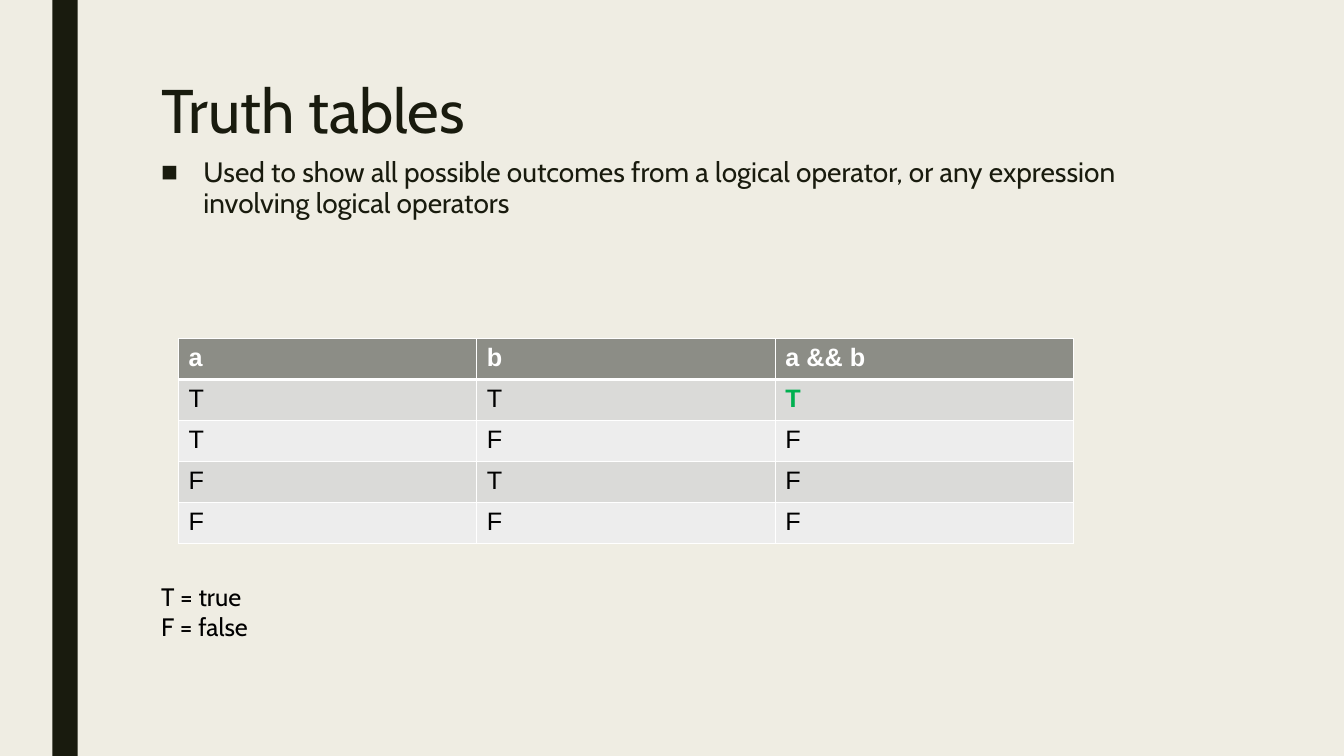
from itertools import product

from lxml import etree
from pptx import Presentation
from pptx.dml.color import RGBColor
from pptx.enum.shapes import MSO_SHAPE
from pptx.enum.text import MSO_ANCHOR, PP_ALIGN
from pptx.oxml.ns import qn
from pptx.util import Inches, Pt

RECT = MSO_SHAPE.RECTANGLE
TOP = MSO_ANCHOR.TOP
LEFT = PP_ALIGN.LEFT
TITLE_ONLY = 5

COLORS = {
    "paper": "EFEDE3", "ink": "191B0E", "head": "8C8D86", "odd": "DADAD8",
    "even": "EDEDED", "white": "FFFFFF", "black": "000000", "true": "00B050",
}


def color(name):
    return RGBColor.from_string(COLORS[name])


def place(shape, box):
    shape.left, shape.top, shape.width, shape.height = map(Inches, box)


def write(par, text, size, tint, face="Cabin", bold=False):
    run = par.add_run()
    run.text = text
    font = run.font
    font.size, font.name, font.bold = Pt(size), face, bold
    font.color.rgb = color(tint)


def add_text(slide, box):
    frame = slide.shapes.add_textbox(*map(Inches, box)).text_frame
    frame.word_wrap = True
    return frame


def add_bar(slide, box):
    bar = slide.shapes.add_shape(RECT, *map(Inches, box))
    bar.shadow.inherit = False
    bar.fill.solid()
    bar.fill.fore_color.rgb = color("ink")
    bar.line.fill.background()


def add_title(slide, box, text):
    title = slide.shapes.title
    place(title, box)
    frame = title.text_frame
    frame.vertical_anchor = TOP
    par = frame.paragraphs[0]
    par.alignment, par.line_spacing = LEFT, 0.89
    write(par, text, 44, "ink")


def add_bullet(slide, box, text):
    par = add_text(slide, box).paragraphs[0]
    par.line_spacing = 0.94
    props = par._p.get_or_add_pPr()
    props.set("marL", str(Inches(0.42)))
    props.set("indent", str(-Inches(0.42)))
    tint = etree.SubElement(props, qn("a:buClr"))
    etree.SubElement(tint, qn("a:srgbClr"), val=COLORS["ink"])
    etree.SubElement(props, qn("a:buFont"), typeface="Arial")
    etree.SubElement(props, qn("a:buChar"), char="■")
    write(par, text, 20, "ink")


def add_edges(cell, widths):
    """Draw white borders; widths are points for left, right, top, bottom."""
    props = cell._tc.get_or_add_tcPr()
    for side, width in zip("LRTB", widths):
        line = etree.SubElement(props, qn(f"a:ln{side}"), w=str(Pt(width)))
        fill = etree.SubElement(line, qn("a:solidFill"))
        etree.SubElement(fill, qn("a:srgbClr"), val=COLORS["white"])


def add_table(slide, box, heads, rows):
    data = [heads, *rows]
    size = len(data), len(heads)
    table = slide.shapes.add_table(*size, *map(Inches, box)).table
    for r, row in enumerate(data):
        for c, text in enumerate(row):
            cell = table.cell(r, c)
            head = r == 0
            hit = not head and c == len(heads) - 1 and text == "T"
            add_edges(cell, (1, 1, 3 if r == 1 else 1, 3 if head else 1))
            cell.fill.solid()
            band = "head" if head else "odd" if r % 2 else "even"
            cell.fill.fore_color.rgb = color(band)
            tint = "white" if head else "true" if hit else "black"
            par = cell.text_frame.paragraphs[0]
            write(par, text, 18, tint, "Arial", head or hit)


def add_key(slide, box, lines):
    frame = add_text(slide, box)
    for i, text in enumerate(lines):
        par = frame.add_paragraph() if i else frame.paragraphs[0]
        write(par, text, 18, "black")


def main():
    deck = Presentation()
    deck.slide_width, deck.slide_height = Inches(13.33), Inches(7.5)
    slide = deck.slides.add_slide(deck.slide_layouts[TITLE_ONLY])
    back = slide.background.fill
    back.solid()
    back.fore_color.rgb = color("paper")

    add_bar(slide, (0.52, 0, 0.25, 7.5))
    add_title(slide, (1.5, 0.75, 10.5, 0.9), "Truth tables")
    add_bullet(slide, (1.5, 1.51, 10.5, 1.1),
               "Used to show all possible outcomes from a logical operator, "
               "or any expression involving logical operators")
    rows = [(a, b, "T" if a == b == "T" else "F")
            for a, b in product("TF", repeat=2)]
    add_table(slide, (1.77, 3.36, 8.88, 2.03), ("a", "b", "a && b"), rows)
    add_key(slide, (1.5, 5.72, 3.6, 0.71), ("T = true", "F = false"))
    deck.save("out.pptx")


if __name__ == "__main__":
    main()
